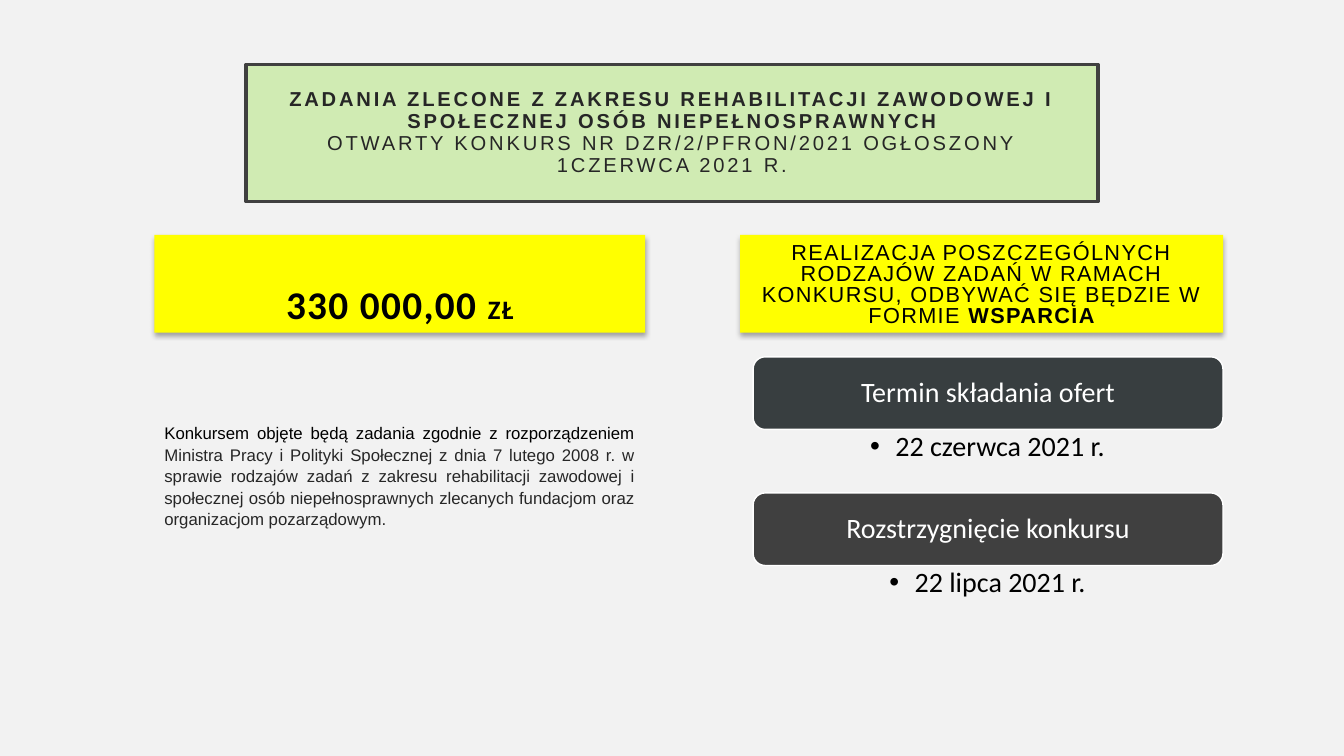
from lxml.etree import SubElement
from pptx import Presentation
from pptx.dml.color import RGBColor
from pptx.enum.shapes import MSO_SHAPE as Shape
from pptx.enum.text import MSO_ANCHOR as Anchor, MSO_AUTO_SIZE as AutoSize, PP_ALIGN as Align
from pptx.oxml.ns import qn
from pptx.util import Inches, Pt

COLORS = {"background": "F2F2F2", "yellow": "FFFF00", "green": "D0EBB3", "gray": "404040",
          "slate": "383E40", "ink": "262626", "black": "000000", "white": "FFFFFF"}

# Each paragraph is a list of runs: (text, format differences)
TITLE = [
    [("ZADANIA ZLECONE Z ZAKRESU REHABILITACJI ZAWODOWEJ I SPOŁECZNEJ OSÓB NIEPEŁNOSPRAWNYCH",
      {"bold": True})],
    [("OTWARTY KONKURS NR DZR/2/PFRON/2021 OGŁOSZONY 1CZERWCA 2021 R.", {})],
]
AMOUNT = [[("330 000,00 ", {}), ("ZŁ", {"size": 19})]]
SUPPORT = [[
    ("REALIZACJA POSZCZEGÓLNYCH RODZAJÓW ZADAŃ W RAMACH KONKURSU, "
     "ODBYWAĆ SIĘ BĘDZIE W FORMIE ", {}),
    ("WSPARCIA", {"bold": True}),
]]
SCOPE = [[
    ("Konkursem objęte będą zadania zgodnie z rozporządzeniem ", {"color": "black"}),
    ("Ministra Pracy i Polityki Społecznej z dnia 7 lutego 2008 r. w sprawie rodzajów zadań "
     "z zakresu rehabilitacji zawodowej i społecznej osób niepełnosprawnych zlecanych "
     "fundacjom oraz organizacjom pozarządowym.", {}),
]]
DEADLINES = [("Termin składania ofert", "22 czerwca 2021 r.", "slate"),
             ("Rozstrzygnięcie konkursu", "22 lipca 2021 r.", "gray")]

LEFT, LEFT_WIDTH = 1.53, 4.87
HEADING_TOP, HEADING_HEIGHT = 2.33, 0.97
STEP_LEFT, STEP_TOP, STEP_WIDTH = 7.47, 3.54, 4.66
STEP_HEIGHT, DATE_HEIGHT = 0.72, 0.63


def rgb(name):
    return RGBColor.from_string(COLORS[name])


def place(shape, left, top, width, height):
    shape.left, shape.top = Inches(left), Inches(top)
    shape.width, shape.height = Inches(width), Inches(height)


def paint(shape, fill, line=None, line_width=1):
    shape.fill.solid()
    shape.fill.fore_color.rgb = rgb(fill)
    if line:
        shape.line.color.rgb = rgb(line)
        shape.line.width = Pt(line_width)


def write(shape, paragraphs, size, font="Arial", color="black", bold=False, tracking=0,
          align=Align.CENTER, anchor=Anchor.TOP, spacing=1.0, margins=(0.1, 0.05, 0.1, 0.05),
          bullet=None):
    frame = shape.text_frame
    frame.word_wrap = True
    frame.auto_size = AutoSize.NONE
    frame.vertical_anchor = anchor
    (frame.margin_left, frame.margin_top,
     frame.margin_right, frame.margin_bottom) = map(Inches, margins)
    for index, runs in enumerate(paragraphs):
        paragraph = frame.add_paragraph() if index else frame.paragraphs[0]
        properties = paragraph._p.get_or_add_pPr()
        indent = Inches(0.25) if bullet else 0
        properties.set("marL", str(indent))
        properties.set("indent", str(-indent))
        if bullet:
            SubElement(properties, qn("a:buFont"), typeface="Arial")
            SubElement(properties, qn("a:buChar"), char=bullet)
        else:
            SubElement(properties, qn("a:buNone"))
        paragraph.alignment = align
        paragraph.line_spacing = spacing
        paragraph.space_before = paragraph.space_after = Pt(0)
        for text, changes in runs:
            run = paragraph.add_run()
            run.text = text
            run.font.name = font
            run.font.size = Pt(changes.get("size", size))
            run.font.bold = changes.get("bold", bold)
            run.font.color.rgb = rgb(changes.get("color", color))
            run._r.get_or_add_rPr().set("spc", str(tracking * 100))


def add_soft_shadow(shape):
    effects = SubElement(shape._element.spPr, qn("a:effectLst"))
    shadow = SubElement(effects, qn("a:outerShdw"), blurRad=str(Pt(3.5)), dist=str(Pt(2.2)),
                        dir="5400000", algn="t", rotWithShape="0")
    color = SubElement(shadow, qn("a:srgbClr"), val=COLORS["black"])
    SubElement(color, qn("a:alpha"), val="32000")


def add_heading(shape, left, width, paragraphs, **text_format):
    place(shape, left, HEADING_TOP, width, HEADING_HEIGHT)
    paint(shape, "yellow")
    add_soft_shadow(shape)
    write(shape, paragraphs, tracking=1, anchor=Anchor.BOTTOM, **text_format)


def add_deadline(slide, top, label, date, fill):
    box = slide.shapes.add_shape(Shape.ROUNDED_RECTANGLE, Inches(STEP_LEFT), Inches(top),
                                 Inches(STEP_WIDTH), Inches(STEP_HEIGHT))
    box.shadow.inherit = False
    paint(box, fill, "white")
    write(box, [[(label, {})]], 20, font="Calibri", color="white", anchor=Anchor.MIDDLE,
          spacing=0.9, margins=(0.08,) * 4)
    date_box = slide.shapes.add_textbox(Inches(STEP_LEFT), Inches(top + STEP_HEIGHT),
                                        Inches(STEP_WIDTH), Inches(DATE_HEIGHT))
    write(date_box, [[(date, {})]], 20, font="Calibri", spacing=0.9,
          margins=(0.15, 0.03, 0.16, 0.03), bullet="•")


def main():
    presentation = Presentation()
    presentation.slide_width, presentation.slide_height = Inches(13.33), Inches(7.5)
    slide = presentation.slides.add_slide(presentation.slide_layouts[4])
    slide.background.fill.solid()
    slide.background.fill.fore_color.rgb = rgb("background")
    title, amount, scope, support, unused = slide.placeholders
    unused._element.getparent().remove(unused._element)

    place(title, 2.44, 0.64, 8.45, 1.36)
    paint(title, "green", "gray", 2.5)
    write(title, TITLE, 14.4, color="ink", tracking=2, anchor=Anchor.MIDDLE, spacing=0.9,
          margins=(0.2,) * 4)

    add_heading(amount, LEFT, LEFT_WIDTH, AMOUNT, size=28, font="Calibri", bold=True)
    add_heading(support, 7.34, 4.79, SUPPORT, size=15.5, spacing=0.8)

    place(scope, LEFT, 4.13, LEFT_WIDTH, 1.8)
    write(scope, SCOPE, 12, color="ink", align=Align.JUSTIFY, spacing=1.07)

    for index, deadline in enumerate(DEADLINES):
        add_deadline(slide, STEP_TOP + index * (STEP_HEIGHT + DATE_HEIGHT), *deadline)
    presentation.save("out.pptx")


if __name__ == "__main__":
    main()
